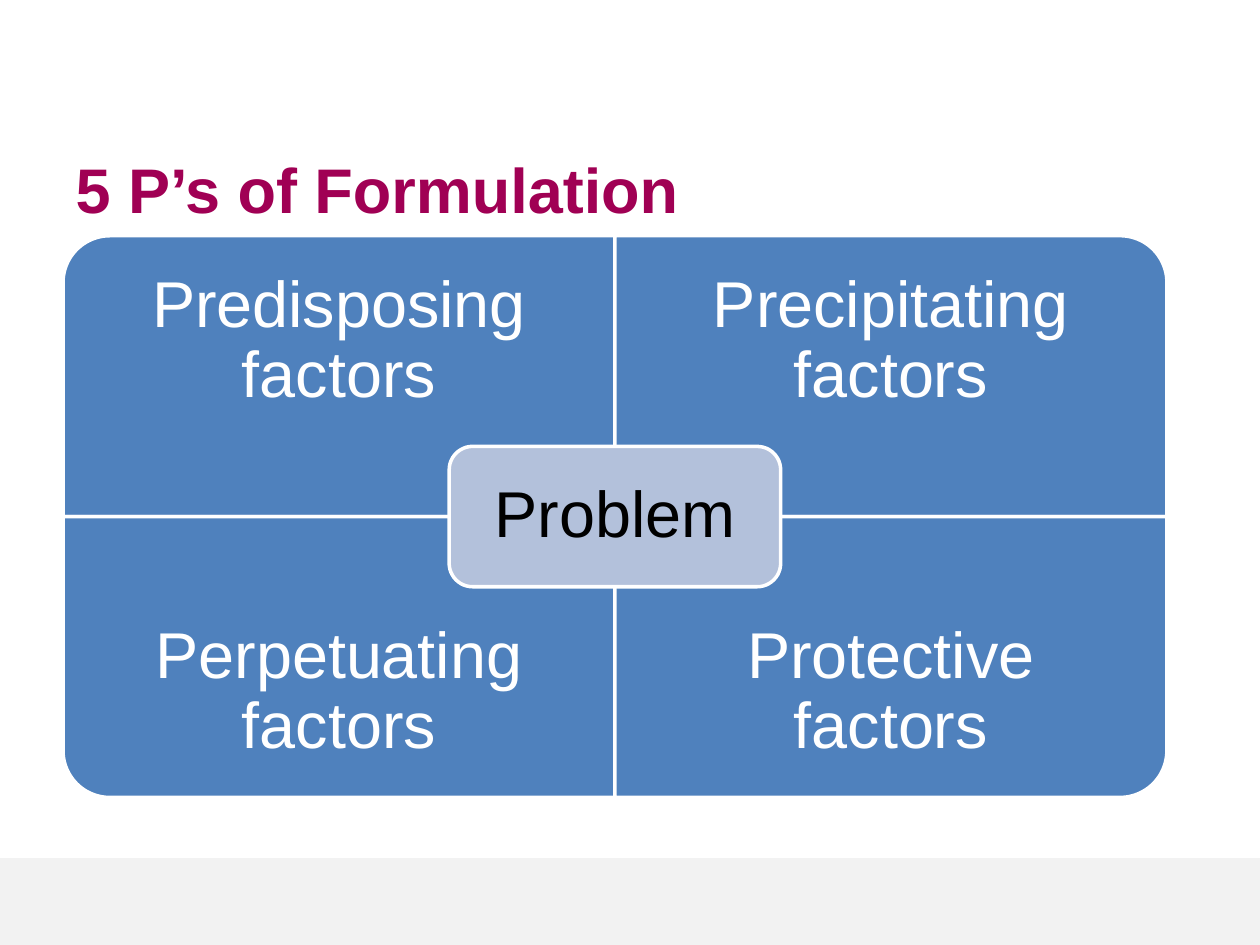
"""Build the 5 P's of Formulation slide: four factor quadrants around the problem."""
from typing import NamedTuple

from pptx import Presentation
from pptx.dml.color import RGBColor
from pptx.enum.shapes import MSO_SHAPE as Preset
from pptx.enum.text import MSO_ANCHOR as Anchor, PP_ALIGN as Align
from pptx.util import Pt

COLORS = {"title": "A00054", "quadrant": "4F81BD", "center": "B3C1DB",
          "white": "FFFFFF", "black": "000000", "footer": "F2F2F2"}
GRID_LEFT, GRID_TOP = 36, 134.7
QUAD_W, QUAD_H = 315.4, 160.5
LABEL_H = 120.4
CENTER_W, CENTER_H = 189.4, 80.2


class Box(NamedTuple):
    left: float
    top: float
    width: float
    height: float

    def lengths(self) -> list:
        return [Pt(value) for value in self]


class Quadrant(NamedTuple):
    label: str
    column: int
    row: int
    rotation: int


QUADRANTS = [
    Quadrant("Predisposing factors", 0, 0, 270),
    Quadrant("Precipitating factors", 1, 0, 0),
    Quadrant("Perpetuating factors", 0, 1, 180),
    Quadrant("Protective factors", 1, 1, 90),
]


def set_all(target, values: dict) -> None:
    for name, value in values.items():
        setattr(target, name, value)


def write(frame, text: str, size: float, color: str, inset: tuple,
          align=Align.CENTER, spacing: float = 0.9, bold: bool = False) -> None:
    frame.text = text
    margins = dict(zip(("margin_left", "margin_top", "margin_right", "margin_bottom"),
                       map(Pt, inset)))
    set_all(frame, {"word_wrap": True, "vertical_anchor": Anchor.MIDDLE, **margins})
    paragraph = frame.paragraphs[0]
    set_all(paragraph, {"alignment": align, "line_spacing": spacing})
    font = paragraph.runs[0].font
    set_all(font, {"name": "Arial", "size": Pt(size), "bold": bold})
    font.color.rgb = RGBColor.from_string(COLORS[color])


def add_panel(slide, preset, box: Box, fill: str, outlined: bool = True,
              rotation: int = 0):
    panel = slide.shapes.add_shape(preset, *box.lengths())
    set_all(panel, {"rotation": rotation})
    panel.shadow.inherit = False
    panel.fill.solid()
    panel.fill.fore_color.rgb = RGBColor.from_string(COLORS[fill])
    if outlined:
        panel.line.color.rgb = RGBColor.from_string(COLORS["white"])
        panel.line.width = Pt(2)
    else:
        panel.line.fill.background()
    return panel


def add_quadrant(slide, quadrant: Quadrant) -> None:
    left = GRID_LEFT + quadrant.column * QUAD_W
    top = GRID_TOP + quadrant.row * QUAD_H
    sideways = quadrant.rotation % 180 == 90
    width, height = (QUAD_H, QUAD_W) if sideways else (QUAD_W, QUAD_H)
    box = Box(left + (QUAD_W - width) / 2, top + (QUAD_H - height) / 2, width, height)
    add_panel(slide, Preset.ROUND_1_RECTANGLE, box, "quadrant",
              rotation=quadrant.rotation)
    label_top = top + quadrant.row * (QUAD_H - LABEL_H)
    label = slide.shapes.add_textbox(*Box(left, label_top, QUAD_W, LABEL_H).lengths())
    write(label.text_frame, quadrant.label, 37, "white", (20.7,) * 4)


def main() -> None:
    deck = Presentation()
    set_all(deck, {"slide_width": Pt(720), "slide_height": Pt(540)})
    slide = deck.slides.add_slide(deck.slide_layouts[5])

    add_panel(slide, Preset.RECTANGLE, Box(0, 490.3, 720, 49.7), "footer", outlined=False)

    title = slide.shapes.title
    set_all(title, dict(zip(("left", "top", "width", "height"),
                            Box(36, 80.8, 612, 53.2).lengths())))
    write(title.text_frame, "5 P’s of Formulation", 36, "title", (7.2, 3.6, 7.2, 3.6),
          align=Align.LEFT, spacing=1.0, bold=True)

    for quadrant in QUADRANTS:
        add_quadrant(slide, quadrant)

    center = Box(GRID_LEFT + QUAD_W - CENTER_W / 2, GRID_TOP + QUAD_H - CENTER_H / 2,
                 CENTER_W, CENTER_H)
    problem = add_panel(slide, Preset.ROUNDED_RECTANGLE, center, "center")
    write(problem.text_frame, "Problem", 37, "black", (10.8,) * 4)

    deck.save("out.pptx")


if __name__ == "__main__":
    main()
